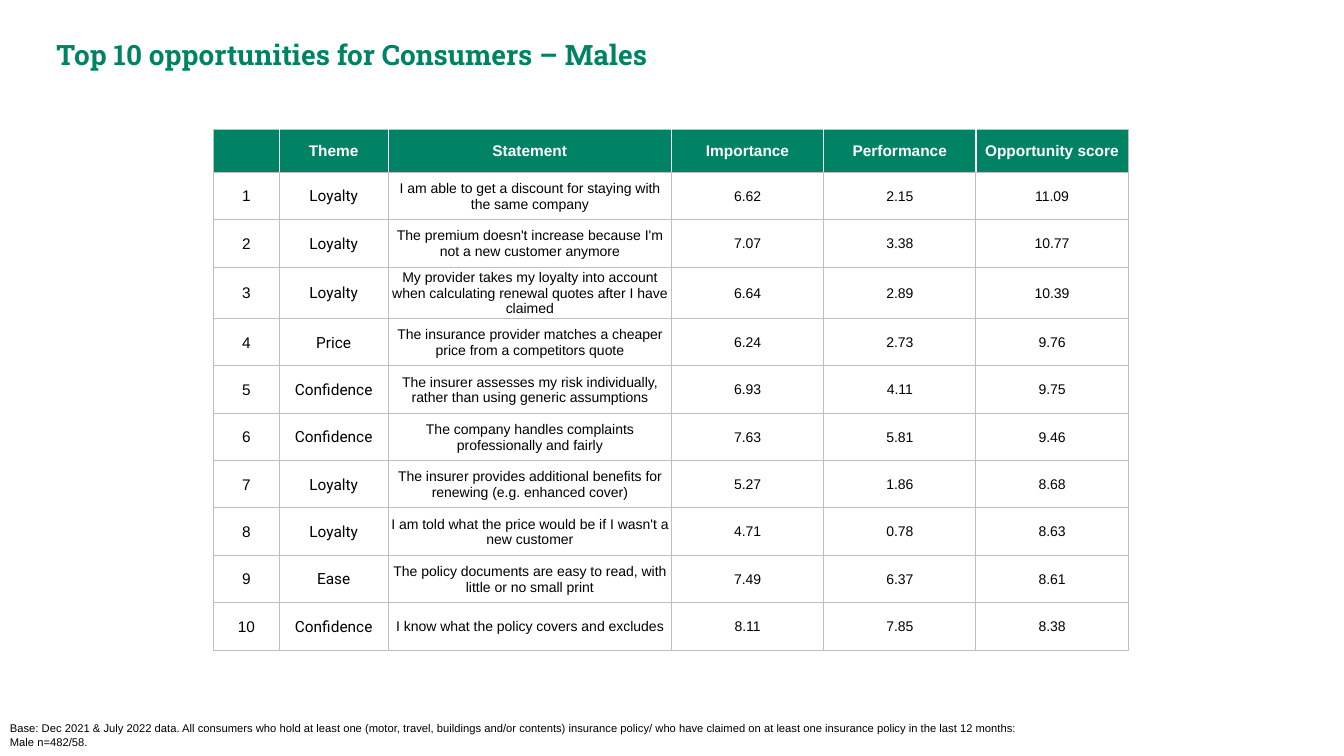
from lxml import etree
from pptx import Presentation
from pptx.dml.color import RGBColor
from pptx.enum.text import MSO_ANCHOR as Anchor, PP_ALIGN as Align
from pptx.oxml.ns import qn
from pptx.util import Inches, Pt

COLORS = {"green": "008265", "grid": "BFBFBF", "white": "FFFFFF", "black": "000000"}


def write(paragraph, text, size, font_name, color, bold=False):
    run = paragraph.add_run()
    run.text = text
    for name, value in {"size": Pt(size), "name": font_name, "bold": bold}.items():
        setattr(run.font, name, value)
    run.font.color.rgb = RGBColor.from_string(COLORS[color])


def add_border(cell, side, color, width):
    properties = cell._tc.get_or_add_tcPr()
    line = etree.SubElement(properties, qn(f"a:ln{side}"), w=str(Pt(width)))
    fill = etree.SubElement(line, qn("a:solidFill"))
    etree.SubElement(fill, qn("a:srgbClr"), val=COLORS[color])


presentation = Presentation()
presentation.slide_width = Inches(13.33)
presentation.slide_height = Inches(7.5)
slide = presentation.slides.add_slide(presentation.slide_layouts[6])

# Title
title = slide.shapes.add_textbox(Inches(0.46), Inches(0.32), Inches(12.28), Inches(0.44))
title.text_frame.word_wrap = True
write(title.text_frame.paragraphs[0], "Top 10 opportunities for Consumers – Males",
      20, "Roboto Slab", "green", True)

# Table content
headings = ["", "Theme", "Statement", "Importance", "Performance", "Opportunity score"]
opportunities = [
    ("Loyalty", "I am able to get a discount for staying with the same company",
     "6.62", "2.15", "11.09"),
    ("Loyalty", "The premium doesn't increase because I'm not a new customer anymore",
     "7.07", "3.38", "10.77"),
    ("Loyalty", "My provider takes my loyalty into account when calculating renewal quotes "
     "after I have claimed", "6.64", "2.89", "10.39"),
    ("Price", "The insurance provider matches a cheaper price from a competitors quote",
     "6.24", "2.73", "9.76"),
    ("Confidence", "The insurer assesses my risk individually, rather than using generic "
     "assumptions", "6.93", "4.11", "9.75"),
    ("Confidence", "The company handles complaints professionally and fairly",
     "7.63", "5.81", "9.46"),
    ("Loyalty", "The insurer provides additional benefits for renewing (e.g. enhanced cover)",
     "5.27", "1.86", "8.68"),
    ("Loyalty", "I am told what the price would be if I wasn't a new customer",
     "4.71", "0.78", "8.63"),
    ("Ease", "The policy documents are easy to read, with little or no small print",
     "7.49", "6.37", "8.61"),
    ("Confidence", "I know what the policy covers and excludes",
     "8.11", "7.85", "8.38"),
]
rows = [headings] + [(str(rank), *entry) for rank, entry in enumerate(opportunities, 1)]
column_widths = [0.65, 1.08, 2.81, 1.51, 1.51, 1.51]
last_column = len(headings) - 1

# Table grid
table = slide.shapes.add_table(len(rows), len(headings), Inches(2.12), Inches(1.28),
                               Inches(9.07), Inches(5.13)).table
table.first_row = True
table.horz_banding = False
for column, width in zip(table.columns, column_widths):
    column.width = Inches(width)
for index, row in enumerate(table.rows):
    row.height = Inches(0.47 if index else 0.43)

# Table cells
cell_format = {"vertical_anchor": Anchor.MIDDLE, "margin_left": Inches(0.01),
               "margin_top": Inches(0.01), "margin_right": Inches(0.01), "margin_bottom": 0}
for row_index, values in enumerate(rows):
    is_header = row_index == 0
    for column_index, text in enumerate(values):
        cell = table.cell(row_index, column_index)
        for name, value in cell_format.items():
            setattr(cell, name, value)

        # White dividers between the headings, grey lines elsewhere
        inner_sides = {"L": column_index > 0, "R": column_index < last_column}
        for side in "LRTB":
            is_divider = is_header and inner_sides.get(side, False)
            add_border(cell, side, *(("white", 1) if is_divider else ("grid", 0.75)))

        if is_header:
            cell.fill.solid()
            cell.fill.fore_color.rgb = RGBColor.from_string(COLORS["green"])
        else:
            cell.fill.background()

        paragraph = cell.text_frame.paragraphs[0]
        paragraph.alignment = Align.CENTER
        if text:
            size = 11 if is_header or column_index < 2 else 10
            font_name = "Roboto" if column_index == 1 and not is_header else "Arial"
            write(paragraph, text, size, font_name, "white" if is_header else "black", is_header)

# Base note
note = slide.shapes.add_textbox(0, Inches(7.11), Inches(11.16), Inches(0.39))
note.text_frame.word_wrap = True
write(note.text_frame.paragraphs[0],
      "Base: Dec 2021 & July 2022 data. All consumers who hold at least one (motor, travel, "
      "buildings and/or contents) insurance policy/ who have claimed on at least one insurance "
      "policy in the last 12 months:", 8, "Arial", "black")
write(note.text_frame.add_paragraph(), "Male n=482/58.", 8, "Arial", "black")

presentation.save("out.pptx")
